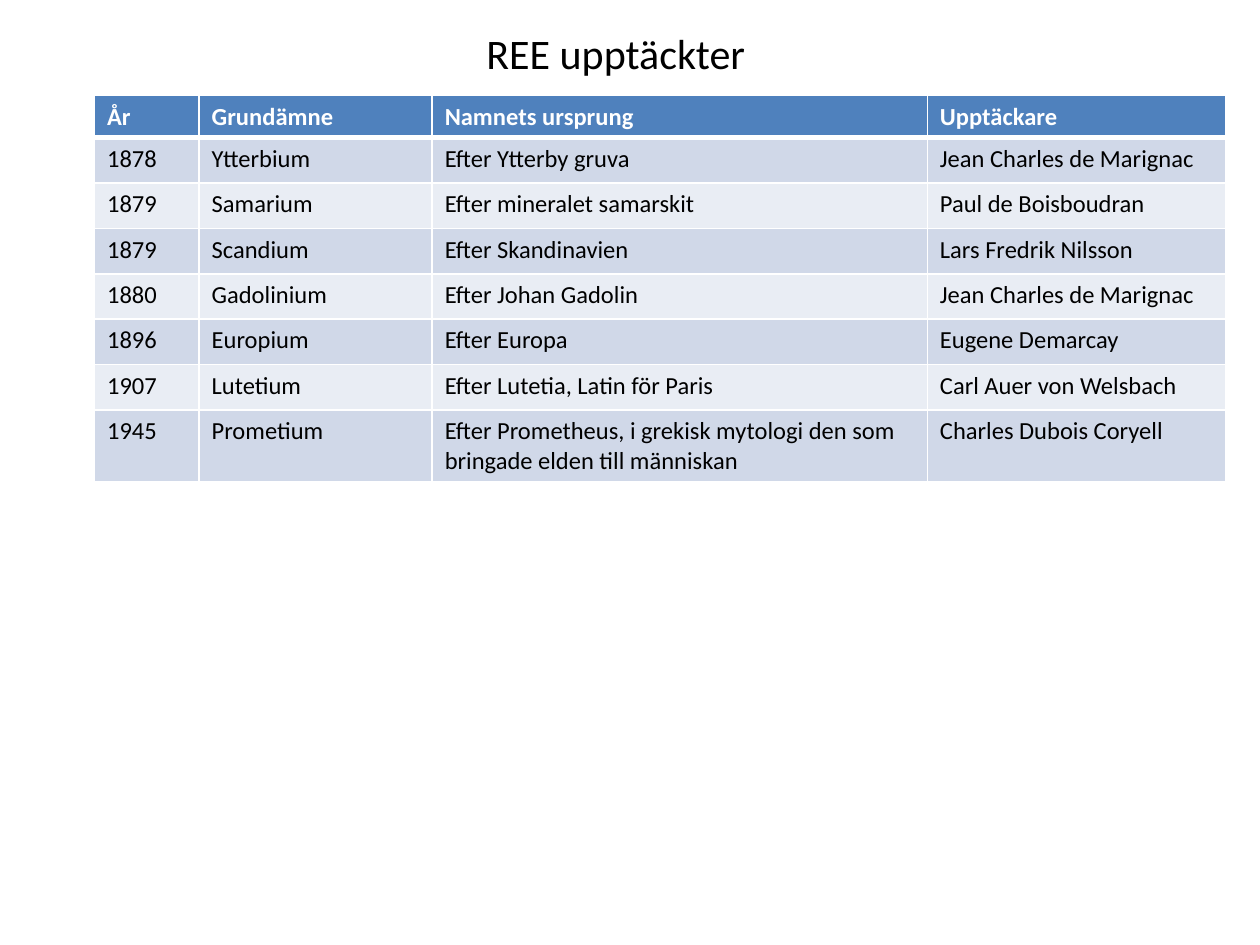
from dataclasses import dataclass

from lxml.etree import SubElement
from pptx import Presentation
from pptx.dml.color import RGBColor as RGB
from pptx.enum.text import MSO_AUTO_SIZE as AutoSize, PP_ALIGN as Align
from pptx.oxml.ns import qn
from pptx.util import Inches, Pt


@dataclass(frozen=True)
class Theme:
    font: str = "Calibri"
    title_size: int = 24
    cell_size: int = 14
    text: str = "000000"
    header_text: str = "FFFFFF"
    header_fill: str = "4F81BD"
    bands: tuple = ("D0D8E8", "E9EDF4")
    border: str = "FFFFFF"
    thin: int = 1
    thick: int = 3


THEME = Theme()

COLUMN_WIDTHS = (0.83, 1.85, 3.93, 2.37)
HEADER_HEIGHT, ROW_HEIGHT = 0.31, 0.36

DISCOVERIES = [
    ("År", "Grundämne", "Namnets ursprung", "Upptäckare"),
    ("1878", "Ytterbium", "Efter Ytterby gruva", "Jean Charles de Marignac"),
    ("1879", "Samarium", "Efter mineralet samarskit", "Paul de Boisboudran"),
    ("1879", "Scandium", "Efter Skandinavien", "Lars Fredrik Nilsson"),
    ("1880", "Gadolinium", "Efter Johan Gadolin", "Jean Charles de Marignac"),
    ("1896", "Europium", "Efter Europa", "Eugene Demarcay"),
    ("1907", "Lutetium", "Efter Lutetia, Latin för Paris", "Carl Auer von Welsbach"),
    ("1945", "Prometium",
     "Efter Prometheus, i grekisk mytologi den som bringade elden till människan",
     "Charles Dubois Coryell"),
]


def style_text(p, size, color, bold=False):
    p.font.name = THEME.font
    p.font.size = Pt(size)
    p.font.bold = bold
    p.font.color.rgb = RGB.from_string(color)


def add_title(slide, text):
    sp = slide.shapes.add_textbox(Inches(2.6), Inches(0.17), Inches(4.65), Inches(0.5))
    tf = sp.text_frame
    tf.word_wrap = True
    tf.auto_size = AutoSize.SHAPE_TO_FIT_TEXT
    p = tf.paragraphs[0]
    p.text = text
    p.alignment = Align.CENTER
    style_text(p, THEME.title_size, THEME.text)


def set_borders(cell, **widths):
    """Draw the four cell edges; keys are L, R, T and B, widths in points."""
    tc_pr = cell._tc.get_or_add_tcPr()
    for side in "LRTB":
        ln = SubElement(tc_pr, qn(f"a:ln{side}"), w=str(Pt(widths.get(side, THEME.thin))))
        fill = SubElement(ln, qn("a:solidFill"))
        SubElement(fill, qn("a:srgbClr"), val=THEME.border)


def style_cell(cell, row):
    # The thick rule lies between the header and the first body row
    if row == 0:
        set_borders(cell, B=THEME.thick)
        fill, color = THEME.header_fill, THEME.header_text
    else:
        set_borders(cell, T=THEME.thick if row == 1 else THEME.thin)
        fill, color = THEME.bands[(row - 1) % 2], THEME.text
    cell.fill.solid()
    cell.fill.fore_color.rgb = RGB.from_string(fill)
    style_text(cell.text_frame.paragraphs[0], THEME.cell_size, color, bold=row == 0)


def add_discovery_table(slide, rows):
    height = HEADER_HEIGHT + ROW_HEIGHT * (len(rows) - 1)
    table = slide.shapes.add_table(
        len(rows), len(COLUMN_WIDTHS), Inches(0.75), Inches(0.76),
        Inches(sum(COLUMN_WIDTHS)), Inches(height)).table
    for column, width in zip(table.columns, COLUMN_WIDTHS):
        column.width = Inches(width)
    for i, values in enumerate(rows):
        table.rows[i].height = Inches(ROW_HEIGHT if i else HEADER_HEIGHT)
        for j, value in enumerate(values):
            cell = table.cell(i, j)
            cell.text = value
            style_cell(cell, i)


def main():
    prs = Presentation()
    prs.slide_width, prs.slide_height = Inches(10), Inches(7.5)
    slide = prs.slides.add_slide(prs.slide_layouts[6])

    # Heading
    add_title(slide, "REE upptäckter ")

    # Discoveries by year
    add_discovery_table(slide, DISCOVERIES)

    prs.save("out.pptx")


if __name__ == "__main__":
    main()
